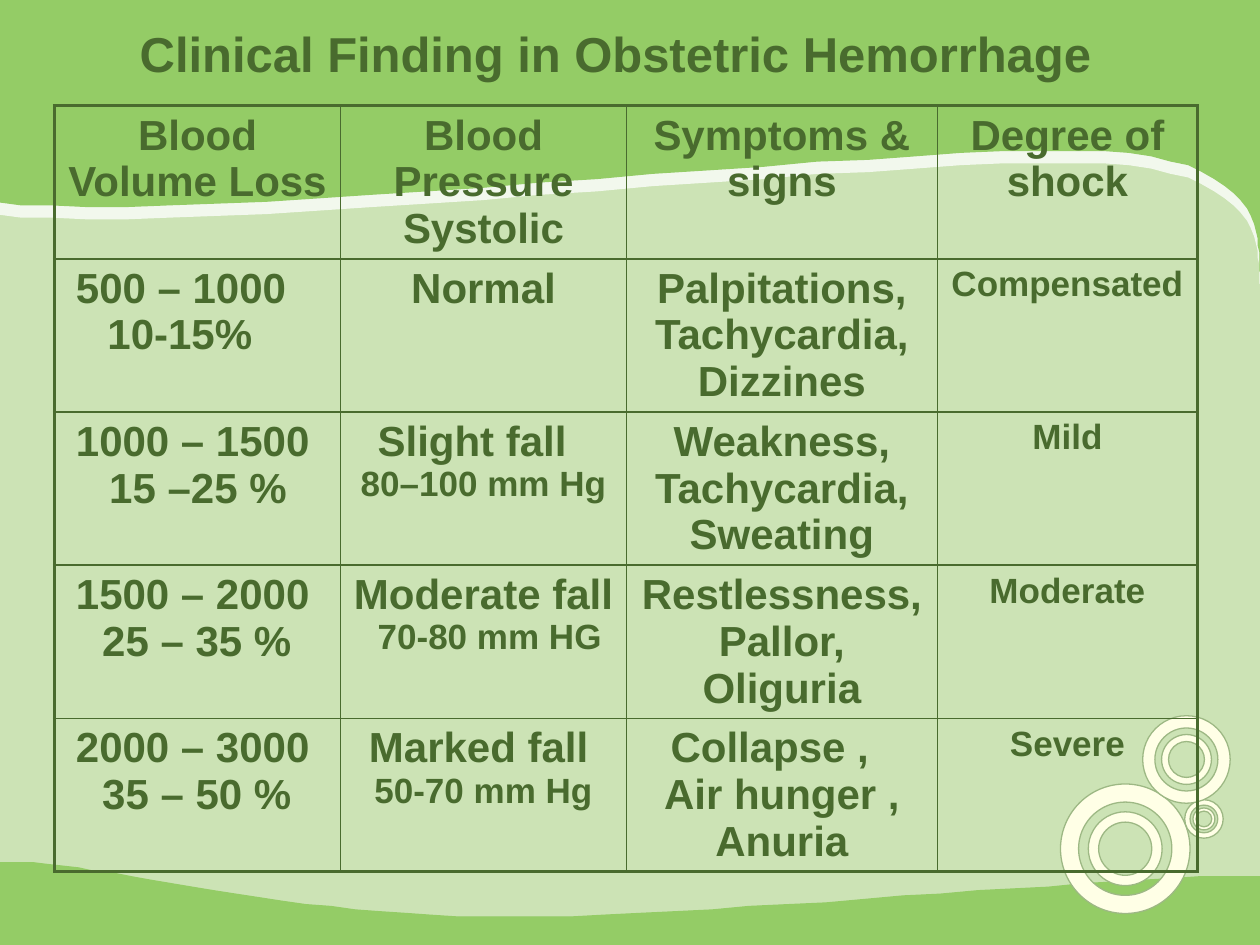
from lxml import etree
from pptx import Presentation
from pptx import util as u
from pptx.dml import color
from pptx.enum import shapes, text
from pptx.oxml import ns

DARK = color.RGBColor(0x49, 0x6B, 0x2E)
GREEN = color.RGBColor(0x94, 0xCC, 0x66)
PALE = color.RGBColor(0xCC, 0xE3, 0xB5)
CREAM = color.RGBColor(0xFF, 0xFF, 0xE6)
EDGE = color.RGBColor(0x9D, 0xB8, 0x84)
GLOW = color.RGBColor(0xF2, 0xF8, 0xED)
STEPS = 24


def write(paragraph, words, size=24, indent=None):
    paragraph.alignment = text.PP_ALIGN.CENTER if indent is None else text.PP_ALIGN.LEFT
    if indent is not None:
        properties = paragraph._p.get_or_add_pPr()
        properties.set("marL", str(u.Pt(indent)))
        properties.set("indent", "0")
    run = paragraph.add_run()
    run.text = words
    run.font.name = "Arial"
    run.font.size = u.Pt(size)
    run.font.bold = True
    run.font.color.rgb = DARK


def add_band(slide, corners, curves):
    points = list(corners)
    for curve in curves:
        controls = [points[-1], *curve]
        for step in range(1, STEPS + 1):
            t = step / STEPS
            weights = ((1 - t) ** 3, 3 * t * (1 - t) ** 2, 3 * t * t * (1 - t), t ** 3)
            points.append(tuple(sum(w * c[axis] for w, c in zip(weights, controls)) for axis in (0, 1)))
    builder = slide.shapes.build_freeform(*points[0], scale=u.Pt(1))
    builder.add_line_segments(points[1:], close=True)
    shape = builder.convert_to_shape()
    shape.fill.solid()
    shape.fill.fore_color.rgb = GREEN
    shape.line.color.rgb = GREEN
    shape.line.width = u.Pt(0.75)
    shape.shadow.inherit = False
    return shape


presentation = Presentation()
presentation.slide_width = u.Pt(720)
presentation.slide_height = u.Pt(540)
slide = presentation.slides.add_slide(presentation.slide_layouts[5])
slide.background.fill.solid()
slide.background.fill.fore_color.rgb = PALE

add_band(
    slide,
    [(720, 541), (-1, 542), (-1, 493)],
    [[(45, 490), (156, 523), (276, 524)], [(396, 526), (647, 499), (721, 501)]],
)
top_band = add_band(
    slide,
    [(-2, -3), (724, -4), (724, 153)],
    [[(708, 168), (752, 93), (631, 86)], [(510, 81), (103, 130), (-3, 115)]],
)
effects = top_band.element.spPr.find(ns.qn("a:effectLst"))
shadow = etree.SubElement(
    effects, ns.qn("a:outerShdw"), dist=str(u.Pt(7)), dir="5400000", algn="ctr", rotWithShape="0"
)
etree.SubElement(shadow, ns.qn("a:srgbClr"), val=str(GLOW))

for center_x, center_y, diameter in [(643, 485, 74), (688, 468, 22), (678, 434, 50)]:
    for size in (diameter, diameter * 0.57):
        ring = slide.shapes.add_shape(
            shapes.MSO_SHAPE.DONUT,
            u.Pt(center_x - size / 2), u.Pt(center_y - size / 2), u.Pt(size), u.Pt(size),
        )
        ring.adjustments[0] = 0.14
        ring.fill.solid()
        ring.fill.fore_color.rgb = CREAM
        ring.line.color.rgb = EDGE
        ring.line.width = u.Pt(0.75)
        ring.shadow.inherit = False

rows = [
    ["Blood Volume Loss", "Blood Pressure Systolic", "Symptoms & signs", "Degree of shock"],
    [
        [("500 – 1000", 24, 5), ("10-15%", 24, 23)],
        "Normal",
        "Palpitations, Tachycardia, Dizzines",
        [("Compensated", 20)],
    ],
    [
        [("1000 – 1500", 24, 5), ("15 –25 %", 24, 24)],
        [("Slight fall", 24, 14), ("80–100 mm Hg", 20)],
        "Weakness, Tachycardia, Sweating",
        [("Mild", 20)],
    ],
    [
        [("1500 – 2000", 24, 5), ("25 – 35 %", 24, 20)],
        [("Moderate fall", 24), ("70-80 mm HG", 20, 14)],
        "Restlessness, Pallor, Oliguria",
        [("Moderate", 20)],
    ],
    [
        [("2000 – 3000", 24, 5), ("35 – 50 %", 24, 20)],
        [("Marked fall", 24, 9), ("50-70 mm Hg", 20)],
        [("Collapse ,", 24, 18), ("Air hunger , Anuria", 24)],
        [("Severe", 20)],
    ],
]
widths = [163.4, 163.4, 177.6, 148.8]
row_height = 85.7
last_row, last_column = len(rows) - 1, len(widths) - 1
table = slide.shapes.add_table(
    len(rows), len(widths), u.Pt(31.2), u.Pt(60.4), u.Pt(sum(widths)), u.Pt(row_height * len(rows))
).table
table.first_row = False
table.horz_banding = False
for column, width in zip(table.columns, widths):
    column.width = u.Pt(width)
for row_index, row in enumerate(rows):
    table.rows[row_index].height = u.Pt(row_height)
    for column_index, content in enumerate(row):
        cell = table.cell(row_index, column_index)
        lines = [(content,)] if isinstance(content, str) else content
        for line_index, line in enumerate(lines):
            frame = cell.text_frame
            write(frame.add_paragraph() if line_index else frame.paragraphs[0], *line)
        outer_sides = {
            "L": column_index == 0,
            "R": column_index == last_column,
            "T": row_index == 0,
            "B": row_index == last_row,
        }
        properties = cell._tc.get_or_add_tcPr()
        for side, is_outer in outer_sides.items():
            border = etree.SubElement(
                properties, ns.qn("a:ln" + side), w=str(u.Pt(2.25 if is_outer else 1))
            )
            border_fill = etree.SubElement(border, ns.qn("a:solidFill"))
            etree.SubElement(border_fill, ns.qn("a:srgbClr"), val=str(DARK))
        cell.fill.background()

title = slide.shapes.title
title.left, title.top, title.width, title.height = u.Pt(36.7), u.Pt(10.4), u.Pt(630), u.Pt(39.6)
title.text_frame.vertical_anchor = text.MSO_ANCHOR.MIDDLE
write(title.text_frame.paragraphs[0], "Clinical Finding in Obstetric Hemorrhage", size=28)
title.element.getparent().append(title.element)

presentation.save("out.pptx")
